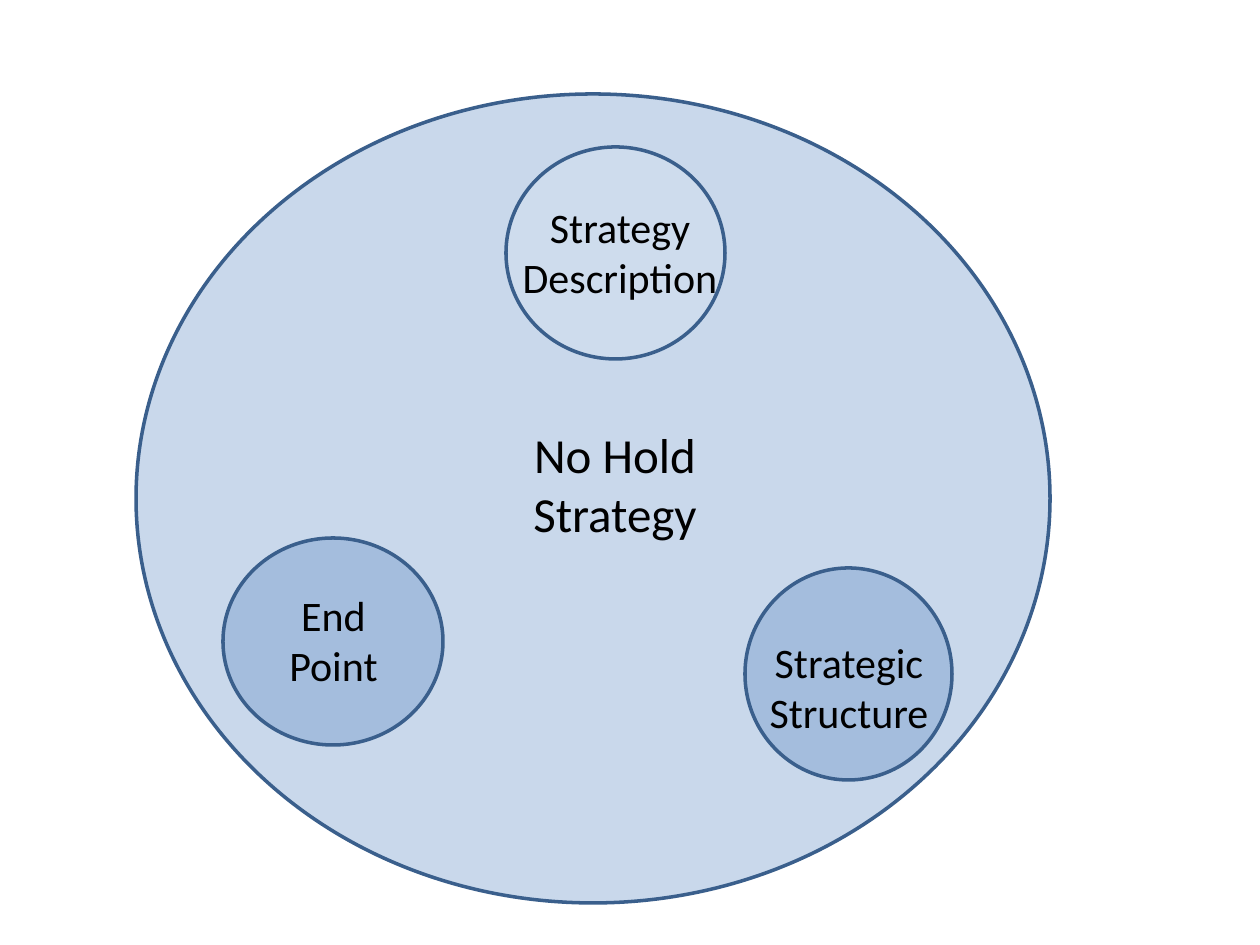
"""Build a slide of one large strategy circle holding three smaller circles."""
from lxml import etree
from pptx import Presentation
from pptx.dml.color import RGBColor
from pptx.enum.shapes import MSO_SHAPE
from pptx.enum.text import MSO_AUTO_SIZE, PP_ALIGN
from pptx.oxml.ns import qn
from pptx.util import Emu, Pt

OVAL = MSO_SHAPE.OVAL
CENTER = PP_ALIGN.CENTER
GROW = MSO_AUTO_SIZE.SHAPE_TO_FIT_TEXT
PX = 914400 // 126
OPACITY = "30000"


def color(hex_string):
    return RGBColor.from_string(hex_string)


def place(*lengths):
    return [Emu(length * PX) for length in lengths]


deck = Presentation()
deck.slide_width, deck.slide_height = place(1260, 945)
page = deck.slides.add_slide(deck.slide_layouts[6])

circles = [
    (136, 94, 914, 809, "4F81BD"),
    (506, 147, 219, 212, "DCE6F2"),
    (745, 568, 207, 212, "4F81BD"),
    (223, 538, 220, 207, "4F81BD"),
]
for left, top, width, height, fill in circles:
    circle = page.shapes.add_shape(OVAL, *place(left, top, width, height))
    circle.shadow.inherit = False
    circle.fill.solid()
    circle.fill.fore_color.rgb = color(fill)
    fill_color = circle.fill._xPr.find(qn("a:solidFill"))[0]
    etree.SubElement(fill_color, qn("a:alpha"), val=OPACITY)
    circle.line.color.rgb = color("3A5F8C")
    circle.line.width = Pt(2)

labels = [
    (520, 418, 190, 131, 28, ["No Hold", "Strategy"]),
    (509, 195, 222, 115, 24, ["Strategy", "Description"]),
    (756, 630, 186, 115, 24, ["Strategic", "Structure"]),
    (276, 583, 115, 115, 24, ["End", "Point"]),
]
for left, top, width, height, size, lines in labels:
    box = page.shapes.add_textbox(*place(left, top, width, height))
    frame = box.text_frame
    frame.word_wrap = False
    frame.auto_size = GROW
    frame.text = "\n".join(lines)
    for para in frame.paragraphs:
        para.alignment = CENTER
        para.font.name = "Calibri"
        para.font.size = Pt(size)
        para.font.color.rgb = color("000000")

deck.save("out.pptx")
